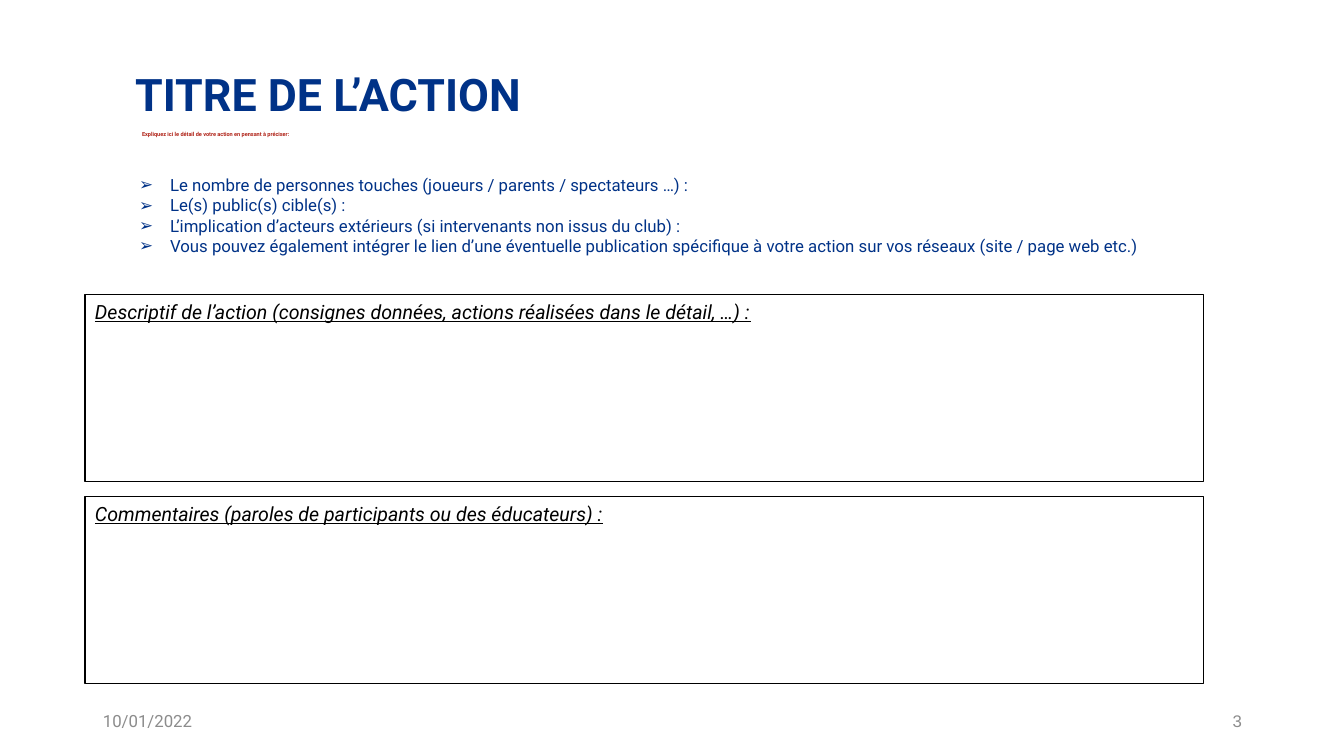
from lxml import etree
from pptx import Presentation
from pptx.dml.color import RGBColor
from pptx.enum.shapes import MSO_SHAPE
from pptx.enum.text import MSO_ANCHOR, MSO_AUTO_SIZE, PP_ALIGN
from pptx.oxml.ns import qn
from pptx.util import Pt

LEFT, RIGHT = PP_ALIGN.LEFT, PP_ALIGN.RIGHT
TOP, MIDDLE = MSO_ANCHOR.TOP, MSO_ANCHOR.MIDDLE
NO_FIT = MSO_AUTO_SIZE.NONE
RECTANGLE = MSO_SHAPE.RECTANGLE

EMU_PER_PX = 914400 / 100.8
COLORS = {"blue": "003287", "red": "B02318", "gray": "8C8C8C", "black": "000000"}


def px(*lengths):
    return [round(length * EMU_PER_PX) for length in lengths]


def write(box, lines, size, color, align=LEFT, anchor=TOP, spacing=1.0, bullet=None, name="Roboto", **styles):
    frame = box.text_frame
    frame.auto_size = NO_FIT
    frame.word_wrap = True
    frame.vertical_anchor = anchor
    frame.text = "\n".join(lines)
    for para in frame.paragraphs:
        indent = px(31)[0] if bullet else 0
        properties = para._p.get_or_add_pPr()
        properties.set("marL", str(indent))
        properties.set("indent", str(-indent))
        para.alignment = align
        para.line_spacing = spacing
        para.space_before = Pt(0)
        if bullet:
            etree.SubElement(properties, qn("a:buFont")).set("typeface", "Arial")
            etree.SubElement(properties, qn("a:buChar")).set("char", bullet)
        else:
            etree.SubElement(properties, qn("a:buNone"))
        for span in para.runs:
            font_values = {"name": name, "size": Pt(size), **styles}
            for key, value in font_values.items():
                setattr(span.font, key, value)
            span.font.color.rgb = RGBColor.from_string(COLORS[color])


deck = Presentation()
deck.slide_width, deck.slide_height = px(1344, 756)
page = deck.slides.add_slide(deck.slide_layouts[3])
title, instruction, checklist = page.placeholders

places = [
    (title, (125, 24, 1109, 146)),
    (instruction, (132, 128, 817, 33)),
    (checklist, (129, 170, 1086, 92)),
]
for box, place in places:
    box.left, box.top, box.width, box.height = px(*place)

write(title, ["TITRE DE L’ACTION"], 32, "blue", anchor=MIDDLE, spacing=0.9, bold=True)
write(
    instruction,
    ["Expliquez ici le détail de votre action en pensant à préciser:"],
    4, "red", spacing=0.7, bold=True,
)
write(
    checklist,
    [
        "Le nombre de personnes touches (joueurs / parents / spectateurs …) :",
        "Le(s) public(s) cible(s) :",
        "L’implication d’acteurs extérieurs (si intervenants non issus du club) :",
        "Vous pouvez également intégrer le lien d’une éventuelle publication spécifique "
        "à votre action sur vos réseaux (site / page web etc.)",
    ],
    12, "blue", bullet="➢",
)

headings = [
    "Descriptif de l’action (consignes données, actions réalisées dans le détail, …) :",
    "Commentaires (paroles de participants ou des éducateurs) :",
]
for row, heading in enumerate(headings):
    panel = page.shapes.add_shape(RECTANGLE, *px(85, 295 + 202 * row, 1119, 187))
    panel.shadow.inherit = False
    panel.fill.background()
    panel.line.color.rgb = RGBColor.from_string(COLORS["black"])
    panel.line.width = Pt(0.75)
    write(panel, [heading], 14, "black", italic=True, underline=True)

footers = [(93, "10/01/2022", LEFT, "Roboto"), (950, "3", RIGHT, "Arial")]
for left, text, align, name in footers:
    footer = page.shapes.add_textbox(*px(left, 701, 302, 40))
    write(footer, [text], 12, "gray", align=align, anchor=MIDDLE, name=name)

deck.save("out.pptx")
